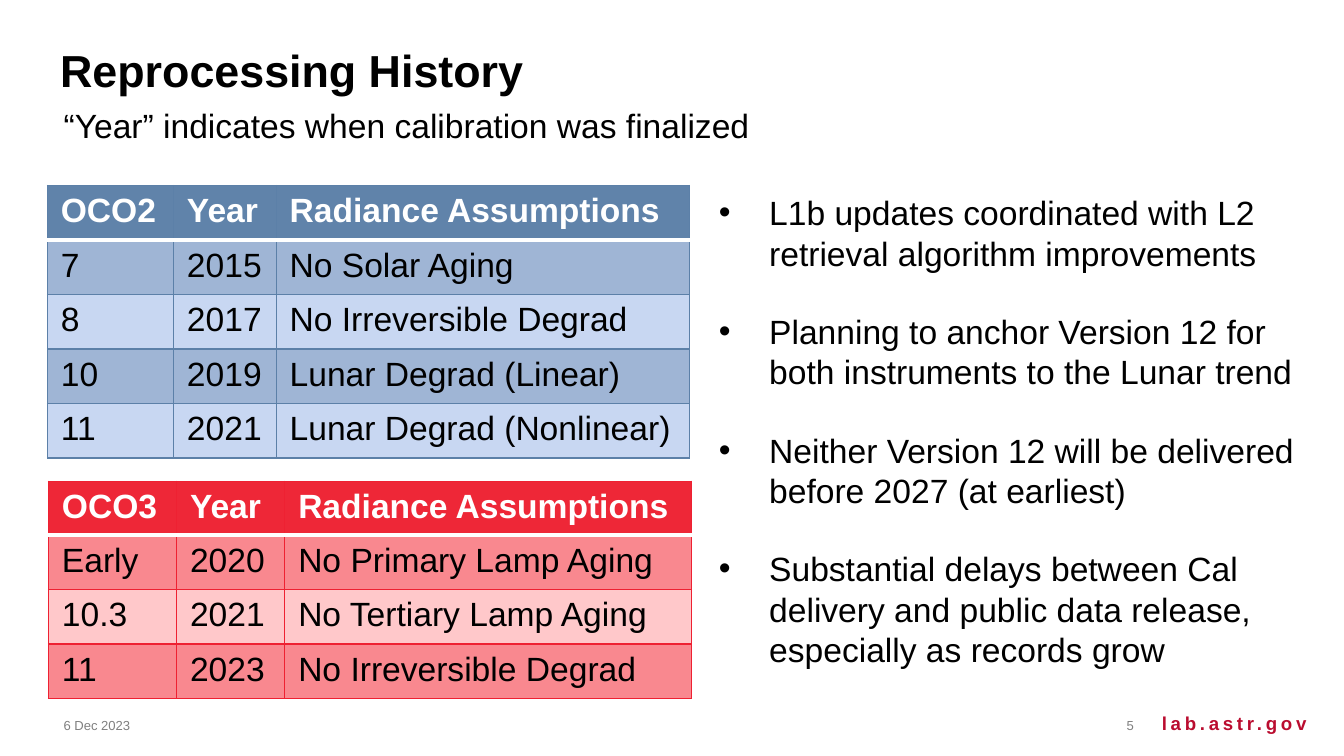
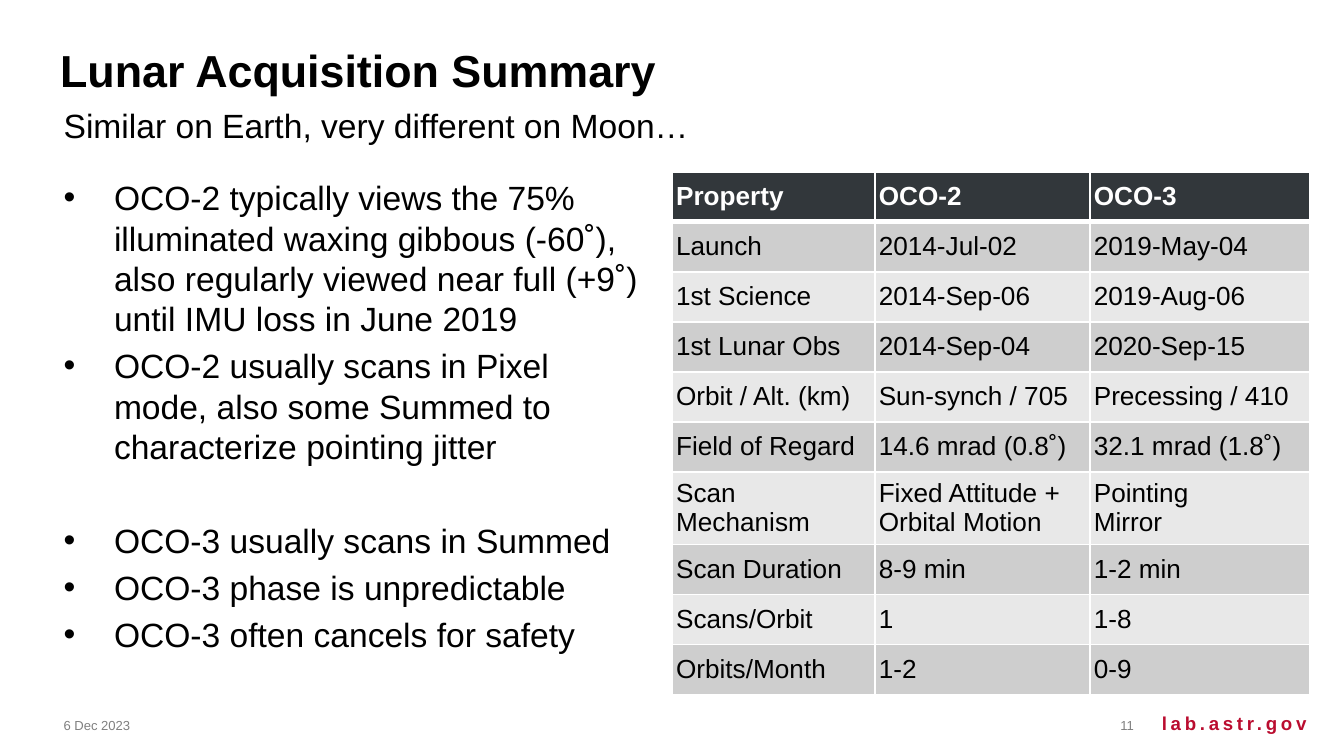
"""Builds two slides on reprocessing history and lunar acquisition."""
from dataclasses import dataclass

from lxml import etree
from pptx import Presentation
from pptx.dml.color import RGBColor
from pptx.enum import text as t
from pptx.oxml import ns
from pptx.util import Pt

FONT = "Arial"
BLACK = RGBColor(0x00, 0x00, 0x00)
WHITE = RGBColor(0xFF, 0xFF, 0xFF)
GRAY = RGBColor(0x80, 0x80, 0x80)
CRIMSON = RGBColor(0xBA, 0x0C, 0x2F)
LEFT, RIGHT = t.PP_ALIGN.LEFT, t.PP_ALIGN.RIGHT
TOP, MIDDLE = t.MSO_ANCHOR.TOP, t.MSO_ANCHOR.MIDDLE
LEADING = 1.2
INDENT = Pt(27)


@dataclass(frozen=True)
class Box:
    """A frame in points."""
    x: float
    y: float
    w: float
    h: float

    def place(self) -> tuple:
        """Gives the frame as lengths."""
        return Pt(self.x), Pt(self.y), Pt(self.w), Pt(self.h)


@dataclass(frozen=True)
class Style:
    """Colours and measures of a table."""
    head: RGBColor
    bands: tuple[RGBColor, RGBColor]
    edge: RGBColor
    line: float
    rule: float
    size: float = 18
    pad: tuple[float, float] = (7.2, 3.6)
    anchor: t.MSO_ANCHOR = TOP


@dataclass(frozen=True)
class Grid:
    """A table with its place, sizes and rows of text."""
    x: float
    y: float
    cols: tuple[float, ...]
    rows: tuple[float, ...]
    style: Style
    cells: tuple[tuple[str, ...], ...]


@dataclass(frozen=True)
class Page:
    """The content of one slide; each bullet has its gap above."""
    title: str
    sub: str
    number: str
    body: Box
    bullets: tuple[tuple[float, str], ...]
    grids: tuple[Grid, ...]


BLUE = Style(RGBColor(0x60, 0x83, 0xAA),
             (RGBColor(0x9F, 0xB5, 0xD5), RGBColor(0xC8, 0xD7, 0xF2)),
             RGBColor(0x5C, 0x80, 0xA8), 0.75, 2)
RED = Style(RGBColor(0xEE, 0x27, 0x37),
            (RGBColor(0xF9, 0x88, 0x8F), RGBColor(0xFF, 0xC8, 0xCA)),
            RGBColor(0xEE, 0x21, 0x32), 0.75, 2)
SLATE = Style(RGBColor(0x32, 0x37, 0x3B),
              (RGBColor(0xCE, 0xCE, 0xCE), RGBColor(0xE8, 0xE8, 0xE8)),
              WHITE, 1, 3, size=14, pad=(2.2, 0.7), anchor=MIDDLE)

TITLE = Box(25, 19.5, 677, 37)
SUB = Box(27, 52.5, 675, 27)
DATE = Box(27, 378, 168, 21.6)
NUMBER = Box(516, 378, 98.6, 21.6)
SITE = Box(610, 378, 97, 24.5)

HISTORY = Page(
    "Reprocessing History", "“Year” indicates when calibration was finalized", "5",
    Box(378, 99.4, 324, 272),
    ((0, "L1b updates coordinated with L2 retrieval algorithm improvements"),
     (20.4, "Planning to anchor Version 12 for both instruments to the Lunar trend"),
     (20.4, "Neither Version 12 will be delivered before 2027 (at earliest)"),
     (20.4, "Substantial delays between Cal delivery and public data release, "
            "especially as records grow")),
    (Grid(25.4, 99.4, (67.6, 55, 221.4), (29.2,) * 5, BLUE,
          (("OCO2", "Year", "Radiance Assumptions"),
           ("7", "2015", "No Solar Aging"),
           ("8", "2017", "No Irreversible Degrad"),
           ("10", "2019", "Lunar Degrad (Linear)"),
           ("11", "2021", "Lunar Degrad (Nonlinear)"))),
     Grid(26, 257.8, (68.6, 58, 218), (27.9,) + (29.2,) * 3, RED,
          (("OCO3", "Year", "Radiance Assumptions"),
           ("Early", "2020", "No Primary Lamp Aging"),
           ("10.3", "2021", "No Tertiary Lamp Aging"),
           ("11", "2023", "No Irreversible Degrad")))))

LUNAR = Page(
    "Lunar Acquisition Summary", "Similar on Earth, very different on Moon…", "11",
    Box(27, 91.4, 324, 280),
    ((0, "OCO-2 typically views the 75% illuminated waxing gibbous (-60˚), "
         "also regularly viewed near full (+9˚) until IMU loss in June 2019"),
     (3.6, "OCO-2 usually scans in Pixel mode, also some Summed to "
           "characterize pointing jitter"),
     (28.8, "OCO-3 usually scans in Summed"),
     (3.6, "OCO-3 phase is unpredictable"),
     (3.6, "OCO-3 often cancels for safety")),
    (Grid(360, 92, (108.6, 115.2, 118), (26.8,) * 6 + (38.9,) + (26.8,) * 3, SLATE,
          (("Property", "OCO-2", "OCO-3"),
           ("Launch", "2014-Jul-02", "2019-May-04"),
           ("1st Science", "2014-Sep-06", "2019-Aug-06"),
           ("1st Lunar Obs", "2014-Sep-04", "2020-Sep-15"),
           ("Orbit / Alt. (km)", "Sun-synch / 705", "Precessing / 410"),
           ("Field of Regard", "14.6 mrad (0.8˚)", "32.1 mrad (1.8˚)"),
           ("Scan\nMechanism", "Fixed Attitude + Orbital Motion", "Pointing\nMirror"),
           ("Scan Duration", "8-9 min", "1-2 min"),
           ("Scans/Orbit", "1", "1-8"),
           ("Orbits/Month", "1-2", "0-9"))),))


def write(frame, words: str, *, size: float = 18, color: RGBColor = BLACK,
          bold: bool = False, align=LEFT, lead: float = 0, track: float = 0,
          gaps: tuple[float, ...] = (), bullet: bool = False) -> None:
    """Fills a text frame with one paragraph per line of words."""
    for i, line in enumerate(words.split("\n")):
        para = frame.add_paragraph() if i else frame.paragraphs[0]
        para.alignment = align
        if lead:
            para.line_spacing = Pt(size * lead)
        if gaps:
            para.space_before = Pt(gaps[i])
        run = para.add_run()
        run.text = line
        font = run.font
        font.name, font.size, font.bold = FONT, Pt(size), bold
        font.color.rgb = color
        if track:
            run._r.get_or_add_rPr().set("spc", str(int(track * 100)))
        if bullet:
            props = para._p.get_or_add_pPr()
            props.set("marL", str(INDENT))
            props.set("indent", str(-INDENT))
            etree.SubElement(props, ns.qn("a:buFont")).set("typeface", FONT)
            etree.SubElement(props, ns.qn("a:buChar")).set("char", "•")


def label(slide, box: Box, words: str, anchor=TOP, **form) -> None:
    """Adds a wrapped text box."""
    frame = slide.shapes.add_textbox(*box.place()).text_frame
    frame.word_wrap = True
    frame.vertical_anchor = anchor
    write(frame, words, **form)


def edge(cell, sides: dict[str, tuple[RGBColor, float]]) -> None:
    """Draws the borders of a cell, in the order left, right, top, bottom."""
    props = cell._tc.get_or_add_tcPr()
    for i, (side, (color, width)) in enumerate(sides.items()):
        line = etree.Element(ns.qn("a:ln" + side), w=str(Pt(width)))
        fill = etree.SubElement(line, ns.qn("a:solidFill"))
        etree.SubElement(fill, ns.qn("a:srgbClr")).set("val", str(color))
        props.insert(i, line)


def tabulate(slide, grid: Grid) -> None:
    """Adds a table with a header row and banded rows."""
    style = grid.style
    box = Box(grid.x, grid.y, sum(grid.cols), sum(grid.rows))
    table = slide.shapes.add_table(len(grid.rows), len(grid.cols), *box.place()).table
    for col, width in zip(table.columns, grid.cols):
        col.width = Pt(width)
    for r, (row, height) in enumerate(zip(table.rows, grid.rows)):
        row.height = Pt(height)
        head = r == 0
        for cell, words in zip(row.cells, grid.cells[r]):
            cell.margin_left = cell.margin_right = Pt(style.pad[0])
            cell.margin_top = cell.margin_bottom = Pt(style.pad[1])
            cell.vertical_anchor = style.anchor
            cell.fill.solid()
            cell.fill.fore_color.rgb = style.head if head else style.bands[(r - 1) % 2]
            sides = dict.fromkeys("LRTB", (style.edge, style.line))
            if r < 2:
                sides["B" if head else "T"] = (WHITE, style.rule)
            edge(cell, sides)
            write(cell.text_frame, words, size=style.size, bold=head,
                  color=WHITE if head else BLACK)


def build(deck, page: Page) -> None:
    """Adds one slide."""
    slide = deck.slides.add_slide(deck.slide_layouts[5])
    title = slide.shapes.title
    title.left, title.top, title.width, title.height = TITLE.place()
    title.text_frame.auto_size = t.MSO_AUTO_SIZE.NONE
    title.text_frame.vertical_anchor = TOP
    write(title.text_frame, page.title, size=24, bold=True, lead=LEADING)
    label(slide, SUB, page.sub, lead=LEADING)
    gaps, lines = zip(*page.bullets)
    label(slide, page.body, "\n".join(lines), gaps=gaps, lead=LEADING, bullet=True)
    label(slide, DATE, "6 Dec 2023", MIDDLE, size=7, color=GRAY)
    label(slide, NUMBER, page.number, MIDDLE, size=7, color=GRAY, align=RIGHT)
    label(slide, SITE, "lab.astr.gov", size=10, color=CRIMSON, bold=True,
          align=RIGHT, track=2)
    for grid in page.grids:
        tabulate(slide, grid)


def main() -> None:
    """Builds and saves the deck."""
    deck = Presentation()
    deck.slide_width, deck.slide_height = Pt(720), Pt(405)
    for page in (HISTORY, LUNAR):
        build(deck, page)
    deck.save("out.pptx")


if __name__ == "__main__":
    main()
